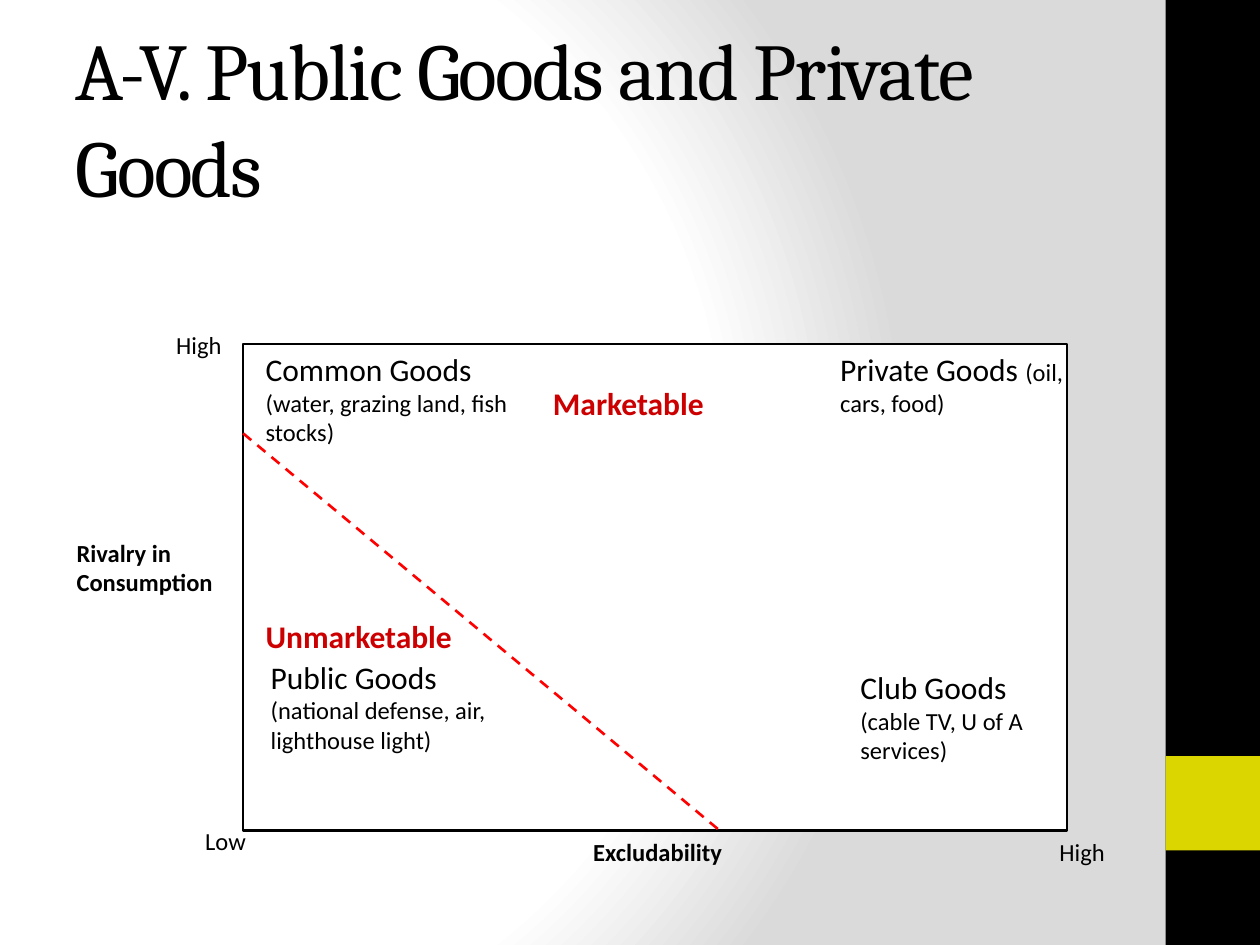
from dataclasses import dataclass

from lxml import etree
from pptx import Presentation
from pptx import util as u
from pptx.dml import color as dml_color
from pptx.enum import dml, shapes, text
from pptx.oxml import ns

COLORS = {
    "ink": "000000",
    "paper": "FFFFFF",
    "shade": "DADADA",
    "accent": "DBD600",
    "market": "CC0000",
    "border": "FF0000",
}
BODY_FONT = "Calibri"
TITLE_FONT = "Cambria"

# The chart frame, shared by the rectangle and the dividing line
LEFT, TOP, WIDTH, HEIGHT = 1.93, 2.73, 6.54, 3.86
BOTTOM = TOP + HEIGHT


@dataclass
class Label:
    words: str
    left: float
    top: float
    width: float
    height: float = 0.33
    size: int = 14
    bold: bool = False
    color: str = "ink"
    examples: str = ""


AXIS_LABELS = [
    Label("Rivalry in Consumption", 0.51, 4.22, 1.57, 0.57, bold=True),
    Label("High", 1.3, 2.57, 1.18),
    Label("High", 8.31, BOTTOM, 1.18),
    Label("Low", 1.53, 6.51, 0.87),
    Label("Excludability", 4.61, BOTTOM, 2.36, bold=True),
]
GOODS = [
    Label("Public Goods ", 2.05, 5.17, 2.2, 0.87, 18,
          examples="(national defense, air, lighthouse light)"),
    Label("Private Goods ", 6.57, TOP, 1.97, 0.63, 18,
          examples="(oil, cars, food)"),
    Label("Common Goods ", 2.01, TOP, 2.28, 0.87, 18,
          examples="(water, grazing land, fish stocks)"),
    Label("Club Goods ", 6.73, 5.25, 1.57, 0.88, 18,
          examples="(cable TV, U of A services)"),
]
REGIONS = [
    Label("Marketable", 4.29, 3, 2.05, 0.4, 18, True, "market"),
    Label("Unmarketable", 2.01, 4.85, 2.05, 0.4, 18, True, "market"),
]


def rgb(name: str) -> dml_color.RGBColor:
    return dml_color.RGBColor.from_string(COLORS[name])


def style_run(run, font: str, size: int, color: str, bold: bool = False) -> None:
    run.font.name = font
    run.font.size = u.Pt(size)
    run.font.bold = bold
    run.font.color.rgb = rgb(color)


def add_box(slide, left: float, top: float, width: float, height: float,
            fill: str, line: str = "") -> None:
    box = slide.shapes.add_shape(
        shapes.MSO_SHAPE.RECTANGLE,
        u.Inches(left), u.Inches(top), u.Inches(width), u.Inches(height))
    box.shadow.inherit = False
    box.fill.solid()
    box.fill.fore_color.rgb = rgb(fill)
    if line:
        box.line.color.rgb = rgb(line)
        box.line.width = u.Pt(1.5)
    else:
        box.line.fill.background()


def add_label(slide, label: Label) -> None:
    frame = slide.shapes.add_textbox(
        u.Inches(label.left), u.Inches(label.top),
        u.Inches(label.width), u.Inches(label.height)).text_frame
    frame.word_wrap = True
    frame.auto_size = text.MSO_AUTO_SIZE.SHAPE_TO_FIT_TEXT
    frame.text = label.words
    paragraph = frame.paragraphs[0]
    style_run(paragraph.runs[0], BODY_FONT, label.size, label.color, label.bold)
    if label.examples:
        examples = paragraph.add_run()
        examples.text = label.examples
        style_run(examples, BODY_FONT, 14, label.color)


def add_dashed_line(slide, start: tuple[float, float],
                    end: tuple[float, float]) -> None:
    divider = slide.shapes.add_connector(
        shapes.MSO_CONNECTOR.STRAIGHT, *map(u.Inches, start + end))
    divider.line.color.rgb = rgb("border")
    divider.line.width = u.Pt(1.5)
    divider.line.dash_style = dml.MSO_LINE.DASH
    etree.SubElement(divider._element.spPr, ns.qn("a:effectLst"))


def set_circular_background(slide) -> None:
    fill = slide.background.fill
    fill.solid()
    solid = slide._element.find(".//" + ns.qn("a:solidFill"))
    gradient = etree.Element(ns.qn("a:gradFill"), rotWithShape="1")
    stops = etree.SubElement(gradient, ns.qn("a:gsLst"))
    for percent, name in ((0, "paper"), (75, "paper"), (100, "shade")):
        stop = etree.SubElement(stops, ns.qn("a:gs"), pos=str(percent * 1000))
        etree.SubElement(stop, ns.qn("a:srgbClr"), val=COLORS[name])
    circle = etree.SubElement(gradient, ns.qn("a:path"), path="circle")
    etree.SubElement(circle, ns.qn("a:fillToRect"),
                     l="20000", t="50000", r="100000", b="50000")
    solid.getparent().replace(solid, gradient)


def set_title(slide, words: str) -> None:
    title = slide.shapes.title
    title.left, title.top = u.Inches(0.5), u.Inches(0.3)
    title.width, title.height = u.Inches(8.33), u.Inches(1.25)
    frame = title.text_frame
    frame.text = words
    frame.word_wrap = True
    frame.auto_size = text.MSO_AUTO_SIZE.NONE
    frame.vertical_anchor = text.MSO_ANCHOR.MIDDLE
    paragraph = frame.paragraphs[0]
    paragraph.alignment = text.PP_ALIGN.LEFT
    style_run(paragraph.runs[0], TITLE_FONT, 46, "ink")
    paragraph.runs[0].font._element.set("spc", "-100")


def main() -> None:
    deck = Presentation()
    deck.slide_width, deck.slide_height = u.Inches(10), u.Inches(7.5)
    slide = deck.slides.add_slide(deck.slide_layouts[5])

    # Background, side bands and title
    set_circular_background(slide)
    add_box(slide, 9.25, 0, 0.75, 7.5, "ink")
    add_box(slide, 9.25, 6, 0.75, 0.75, "accent")
    set_title(slide, "A-V. Public Goods and Private Goods")

    # Chart frame with its axes and goods
    add_box(slide, LEFT, TOP, WIDTH, HEIGHT, "paper", "ink")
    for label in AXIS_LABELS + GOODS:
        add_label(slide, label)

    # Border between the marketable and unmarketable regions
    add_dashed_line(slide, (LEFT, 3.44), (5.71, BOTTOM))
    for label in REGIONS:
        add_label(slide, label)

    deck.save("out.pptx")


if __name__ == "__main__":
    main()
